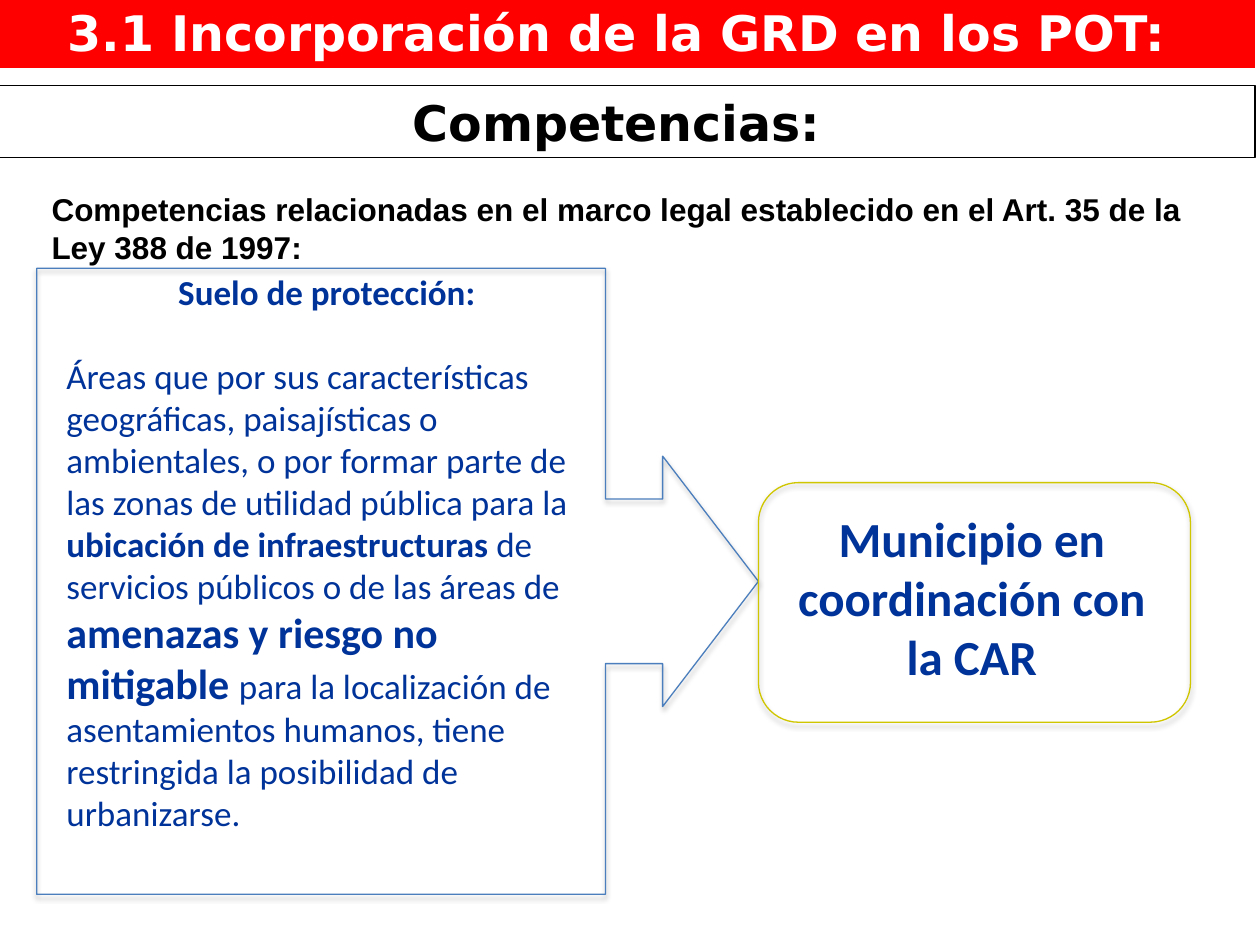
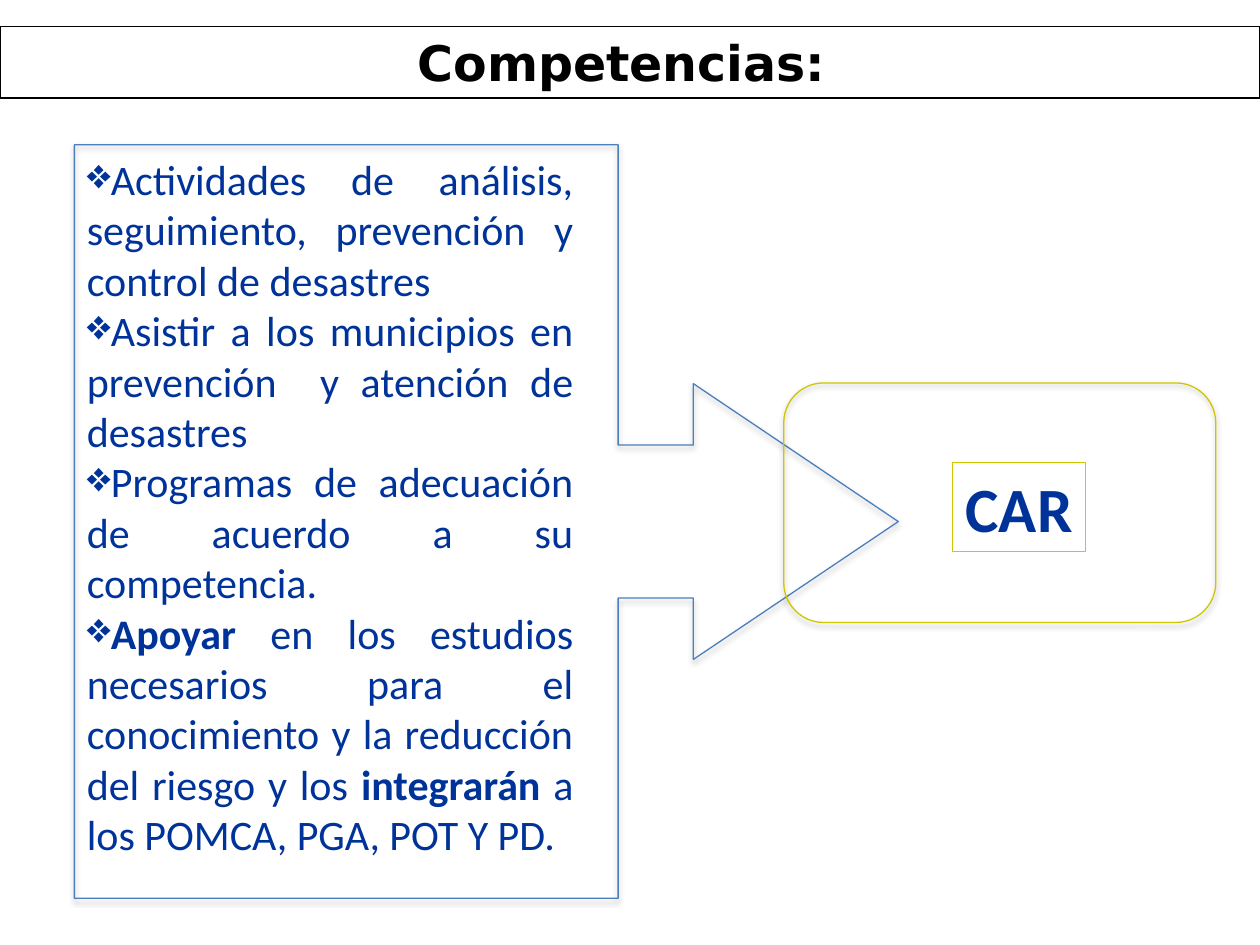
from lxml import etree
from pptx import Presentation
from pptx import util as u
from pptx.dml.color import RGBColor
from pptx.enum import shapes, text
from pptx.oxml import ns

WHITE, BLACK, RED = "FFFFFF", "000000", "FF0000"
NAVY, STEEL, OLIVE, HALO = "003399", "4B7EBC", "D0C600", "FEFEFE"
BODY_FONT, TITLE_FONT, INTRO_FONT = "Calibri", "DejaVu Sans", "Arial"
CENTER, JUSTIFY, LEFT = text.PP_ALIGN.CENTER, text.PP_ALIGN.JUSTIFY, text.PP_ALIGN.LEFT


def color(value):
    """Turn a hex string into a colour."""
    return RGBColor.from_string(value)


def sub(parent, tag, **attributes):
    """Append a drawing element with its attributes."""
    return etree.SubElement(parent, ns.qn(tag), attributes)


def add_span(para, words, size=20, font=BODY_FONT, ink=NAVY, bold=False, halo=None):
    """Add formatted text to a paragraph."""
    span = para.add_run()
    span.text = words
    span.font.size, span.font.name, span.font.bold = u.Pt(size), font, bold
    span.font.color.rgb = color(ink)
    if halo:
        properties = span.font._element
        outline = sub(properties, "a:ln", w=str(u.Pt(1.5)))
        sub(sub(outline, "a:solidFill"), "a:srgbClr", val=halo)
        properties.insert(0, outline)
    return span


class Deck:
    """Hold the presentation style and the current slide."""

    def __init__(self):
        """Start an empty 4:3 presentation."""
        self.deck = Presentation()
        self.deck.slide_width, self.deck.slide_height = u.Cm(25.4), u.Cm(19.05)
        self.page = None

    def new_page(self):
        """Start a blank white slide."""
        self.page = self.deck.slides.add_slide(self.deck.slide_layouts[6])
        self.page.background.fill.solid()
        self.page.background.fill.fore_color.rgb = color(WHITE)

    def shape(self, kind, place, line=None, fill=None, shadow=False, adjust=()):
        """Draw a preset shape."""
        shape = self.page.shapes.add_shape(kind, *map(u.Cm, place))
        shape.shadow.inherit = False
        if fill:
            shape.fill.solid()
            shape.fill.fore_color.rgb = color(fill)
        else:
            shape.fill.background()
        if line:
            shape.line.color.rgb = color(line)
            shape.line.width = u.Pt(0.75)
        else:
            shape.line.fill.background()
        for index, value in enumerate(adjust):
            shape.adjustments[index] = value
        if shadow:
            effects = shape._element.spPr.find(ns.qn("a:effectLst"))
            outer = sub(effects, "a:outerShdw", blurRad=str(u.Pt(3.1)),
                        dist=str(u.Pt(1.8)), dir="5400000", rotWithShape="0")
            sub(sub(outer, "a:srgbClr", val=BLACK), "a:alpha", val="35000")
        return shape

    def fill_text(self, box, paragraphs, align=LEFT, bullet=None, wrap=True, **style):
        """Fill a box with paragraphs, each a list of (text, format) pairs."""
        frame = box.text_frame
        frame.word_wrap = wrap
        frame.auto_size = text.MSO_AUTO_SIZE.SHAPE_TO_FIT_TEXT
        for index, spans in enumerate(paragraphs):
            para = frame.add_paragraph() if index else frame.paragraphs[0]
            para.alignment = align
            if bullet:
                sub(para._p.get_or_add_pPr(), "a:buChar", char=bullet)
            for words, changes in spans:
                add_span(para, words, **{**style, **changes})
        return frame

    def text_box(self, place, paragraphs, **style):
        """Place text without a frame."""
        box = self.page.shapes.add_textbox(*map(u.Cm, place))
        return self.fill_text(box, paragraphs, **style)

    def band(self, words, left, top, ink=BLACK, **look):
        """Draw a full-width title band."""
        box = self.shape(shapes.MSO_SHAPE.RECTANGLE, (left, top, 25.4, 1.45), **look)
        self.fill_text(box, [[(words, {})]], align=CENTER, size=28,
                       font=TITLE_FONT, ink=ink, bold=True)

    def callout(self, place, adjust):
        """Draw the outlined panel that points to the responsible body."""
        self.shape(shapes.MSO_SHAPE.RIGHT_ARROW_CALLOUT, place, line=STEEL,
                   shadow=True, adjust=adjust)

    def authority(self, left, top):
        """Draw the rounded frame of the responsible body."""
        self.shape(shapes.MSO_SHAPE.ROUNDED_RECTANGLE, (left, top, 8.71, 4.83),
                   line=OLIVE, shadow=True)


def protected_land(deck):
    """Build the slide on protected land."""
    bold = {"bold": True}
    deck.new_page()
    deck.text_box((0.79, 3.71, 24.36, 1.8), [[(
        "Competencias relacionadas en el marco legal establecido en el Art. 35 "
        "de la Ley 388 de 1997:", {})]], size=18, font=INTRO_FONT, ink=BLACK, bold=True)
    deck.callout((0.74, 5.41, 14.55, 12.62), (0.263, 0.2, 0.153, 0.788))
    definition = deck.text_box((1.09, 5.33, 11, 11.71), [
        [("Suelo de protección:", bold)],
        [("Áreas que por sus características geográficas, paisajísticas o ambientales, "
          "o por formar parte de las zonas de utilidad pública para la", {})],
        [("ubicación de infraestructuras ", bold),
         ("de servicios públicos o de las áreas de ", {}),
         ("amenazas y riesgo no mitigable ", {"size": 24, "bold": True}),
         ("para la localización de asentamientos humanos, tiene restringida "
          "la posibilidad de urbanizarse.", {})]])
    heading = definition.paragraphs[0]
    heading.alignment, heading.space_after = CENTER, u.Pt(24)
    deck.authority(15.29, 9.73)
    deck.text_box((15.49, 10.13, 8.2, 3.84), [[("Municipio en coordinación con la CAR", {})]],
                  align=CENTER, size=28, bold=True, halo=HALO)
    deck.band("3.1 Incorporación de la GRD en los POT: ", -0.1, -0.08, ink=WHITE, fill=RED)
    deck.band("Competencias: ", -0.1, 1.73, line=BLACK)


def regional_duties(deck):
    """Build the slide on the duties of the CAR."""
    bold = {"bold": True}
    deck.new_page()
    deck.text_box((1.5, 2.97, 10.31, 15.65), [
        [("Actividades de análisis, seguimiento, prevención y control de desastres ", {})],
        [("Asistir a los municipios en prevención  y atención de desastres ", {})],
        [("Programas de adecuación de acuerdo a su competencia.", {})],
        [("Apoyar ", bold),
         ("en los estudios necesarios para el conocimiento y la reducción del riesgo "
          "y los ", {}),
         ("integrarán", bold), (" a los POMCA, PGA, POT Y PD.", {})]],
        align=JUSTIFY, bullet="❖", size=24)
    deck.callout((1.5, 2.92, 16.61, 15.19), (0.203, 0.183, 0.272, 0.66))
    deck.authority(15.8, 7.72)
    label = deck.shape(shapes.MSO_SHAPE.RECTANGLE, (19.2, 9.32, 2.69, 1.8), line=OLIVE)
    deck.fill_text(label, [[("CAR", {})]], align=CENTER, wrap=False, size=36,
                   bold=True, halo=HALO)
    deck.band("Competencias: ", 0, 0.53, line=BLACK)


def main():
    """Build and save the presentation."""
    deck = Deck()
    protected_land(deck)
    regional_duties(deck)
    deck.deck.save("out.pptx")


if __name__ == "__main__":
    main()
